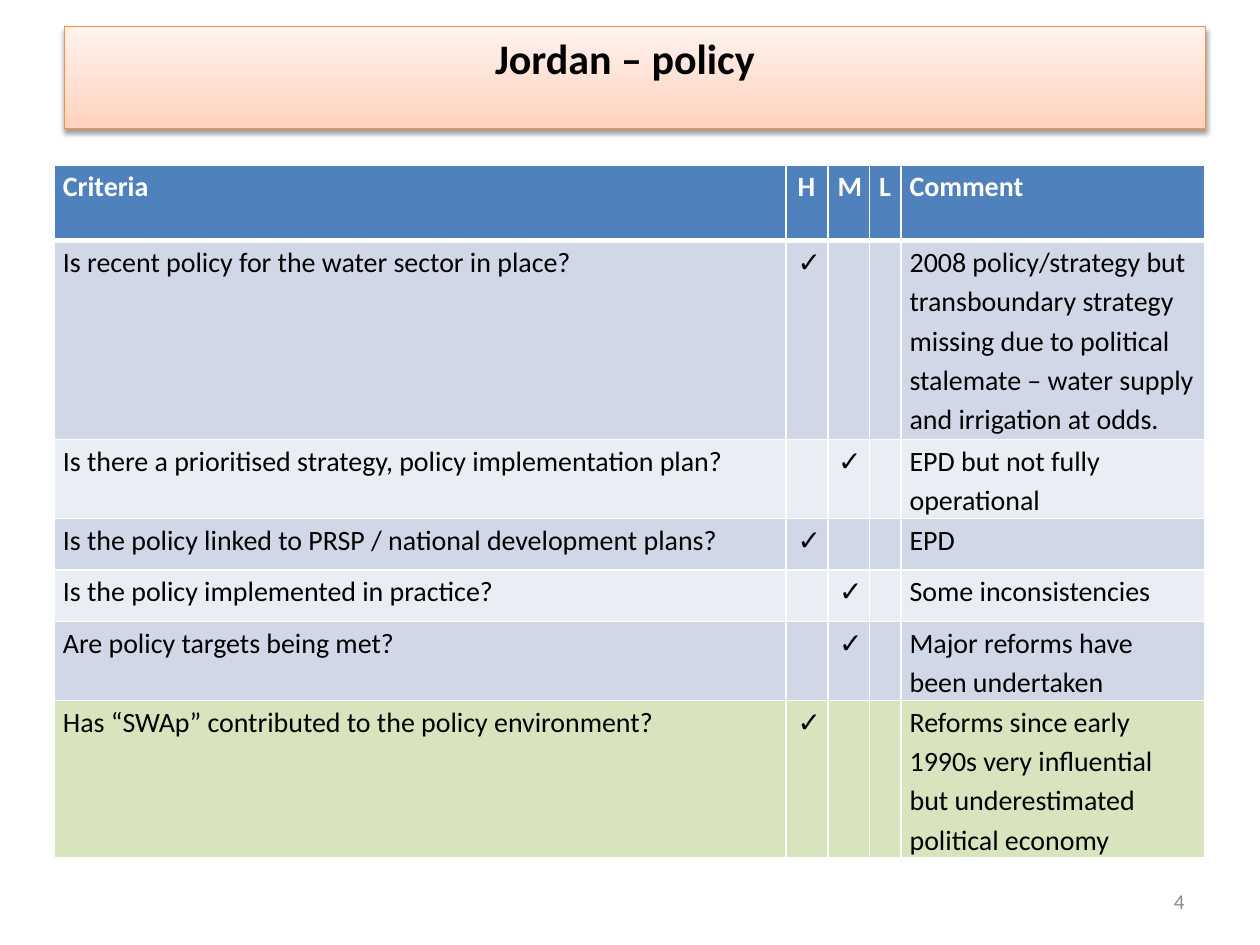
from lxml import etree
from pptx import Presentation
from pptx import util as u
from pptx.dml.color import RGBColor
from pptx.enum import text
from pptx.oxml import parse_xml
from pptx.oxml.ns import nsdecls

BLACK = RGBColor(0x00, 0x00, 0x00)
WHITE = RGBColor(0xFF, 0xFF, 0xFF)
GREY = RGBColor(0x8C, 0x8C, 0x8C)
ORANGE = RGBColor(0xF6, 0x92, 0x40)
BLUE = RGBColor(0x4F, 0x81, 0xBD)
BAND_DARK = RGBColor(0xD0, 0xD8, 0xE8)
BAND_LIGHT = RGBColor(0xE9, 0xED, 0xF4)
GREEN = RGBColor(0xD7, 0xE4, 0xBD)
PEACH_STOPS = (
    (0, RGBColor(0xFF, 0xD2, 0xBD)),
    (35, RGBColor(0xFF, 0xDE, 0xD0)),
    (100, RGBColor(0xFF, 0xF2, 0xED)),
)

COLUMN_WIDTHS = (5.81, 0.33, 0.33, 0.25, 2.41)
ROW_HEIGHTS = (0.6, 1.58, 0.62, 0.41, 0.41, 0.62, 1.25)
ROW_FILLS = (BLUE, BAND_DARK, BAND_LIGHT, BAND_DARK, BAND_LIGHT, BAND_DARK, GREEN)
COLUMN_INDENTS = ((0.38, -0.38), (0.02, 0), (0.02, 0), (0, 0), (0, 0))
CENTERED_CELLS = {(0, 2), (0, 3), (2, 2)}
ROWS = (
    ("Criteria", "H", "M", "L", "Comment"),
    ("Is recent policy for the water sector in place?", "✓", "", "",
     "2008 policy/strategy but transboundary strategy missing due to political "
     "stalemate – water supply and irrigation at odds."),
    ("Is there a prioritised strategy, policy implementation plan?", "", "✓", "",
     "EPD but not fully operational"),
    ("Is the policy linked to PRSP / national development plans?", "✓", "", "", "EPD"),
    ("Is the policy implemented in practice?", "", "✓", "", "Some inconsistencies"),
    ("Are policy targets being met?", "", "✓", "", "Major reforms have been undertaken"),
    ("Has “SWAp” contributed to the policy environment?", "✓", "", "",
     "Reforms since early 1990s very influential but underestimated political economy"),
)


def set_values(target, values):
    for name, value in values.items():
        setattr(target, name, value)


def format_font(paragraph, size, color, bold=False):
    set_values(paragraph.font, {"name": "Calibri", "size": u.Pt(size), "bold": bold})
    paragraph.font.color.rgb = color


def place(shape, box):
    names = ("left", "top", "width", "height")
    set_values(shape, {name: u.Inches(value) for name, value in zip(names, box)})


def add_title(slide, box):
    title = slide.shapes.title
    place(title, box)
    title.line.color.rgb = ORANGE
    title.line.width = u.Pt(0.75)
    stops = "".join(
        f'<a:gs pos="{position * 1000}"><a:srgbClr val="{color}"/></a:gs>'
        for position, color in PEACH_STOPS
    )
    properties = title.fill._xPr
    properties.find("{*}ln").addprevious(parse_xml(
        f'<a:gradFill {nsdecls("a")} rotWithShape="1"><a:gsLst>{stops}</a:gsLst>'
        '<a:lin ang="16200000" scaled="0"/></a:gradFill>'
    ))
    properties.append(parse_xml(
        f'<a:effectLst {nsdecls("a")}><a:outerShdw blurRad="{u.Pt(3.1)}" '
        f'dist="{u.Pt(1.6)}" dir="5400000" rotWithShape="0">'
        '<a:srgbClr val="000000"><a:alpha val="38000"/></a:srgbClr>'
        "</a:outerShdw></a:effectLst>"
    ))
    frame = title.text_frame
    frame.text = "Jordan – policy"
    set_values(frame, {
        "word_wrap": True,
        "auto_size": text.MSO_AUTO_SIZE.NONE,
        "vertical_anchor": text.MSO_ANCHOR.TOP,
        "margin_right": u.Inches(0.26),
    })
    paragraph = frame.paragraphs[0]
    paragraph.alignment = text.PP_ALIGN.CENTER
    format_font(paragraph, 24, BLACK, True)


def set_borders(cell, widths):
    properties = cell._tc.get_or_add_tcPr()
    for index, (side, width) in enumerate(widths.items()):
        properties.insert(index, parse_xml(
            f'<a:ln{side} {nsdecls("a")} w="{u.Pt(width)}"><a:solidFill>'
            f'<a:srgbClr val="{WHITE}"/></a:solidFill></a:ln{side}>'
        ))


def fill_cell(cell, row, column, words):
    header = row == 0
    cell.fill.solid()
    cell.fill.fore_color.rgb = ROW_FILLS[row]
    set_values(cell, {
        "margin_left": u.Inches(0.07),
        "margin_right": u.Inches(0.07),
        "margin_top": 0,
        "margin_bottom": 0,
    })
    set_borders(cell, {"L": 1, "R": 1, "T": 3 if row == 1 else 1, "B": 3 if header else 1})
    cell.text = words
    paragraph = cell.text_frame.paragraphs[0]
    paragraph.line_spacing = 1.15
    if (row, column) in CENTERED_CELLS:
        paragraph.alignment = text.PP_ALIGN.CENTER
    properties = paragraph._p.get_or_add_pPr()
    for name, value in zip(("marL", "indent"), COLUMN_INDENTS[column]):
        properties.set(name, str(u.Inches(value)))
    format_font(paragraph, 16, WHITE if header else BLACK, header)


def add_criteria_table(slide, box):
    table = slide.shapes.add_table(
        len(ROWS), len(COLUMN_WIDTHS), *map(u.Inches, box)
    ).table
    for column, width in zip(table.columns, COLUMN_WIDTHS):
        column.width = u.Inches(width)
    for row, height in zip(table.rows, ROW_HEIGHTS):
        row.height = u.Inches(height)
    for row, values in enumerate(ROWS):
        for column, words in enumerate(values):
            fill_cell(table.cell(row, column), row, column, words)


def add_page_number(slide, box):
    frame = slide.shapes.add_textbox(*map(u.Inches, box)).text_frame
    set_values(frame, {
        "text": "4",
        "word_wrap": True,
        "vertical_anchor": text.MSO_ANCHOR.MIDDLE,
    })
    paragraph = frame.paragraphs[0]
    paragraph.alignment = text.PP_ALIGN.RIGHT
    format_font(paragraph, 12, GREY)


def main():
    presentation = Presentation()
    set_values(presentation, {"slide_width": u.Inches(10), "slide_height": u.Inches(7.5)})
    slide = presentation.slides.add_slide(presentation.slide_layouts[5])
    add_criteria_table(slide, (0.43, 1.31, sum(COLUMN_WIDTHS), sum(ROW_HEIGHTS)))
    add_title(slide, (0.51, 0.21, 9.06, 0.81))
    add_page_number(slide, (7.17, 6.95, 2.33, 0.4))
    presentation.save("out.pptx")


if __name__ == "__main__":
    main()
